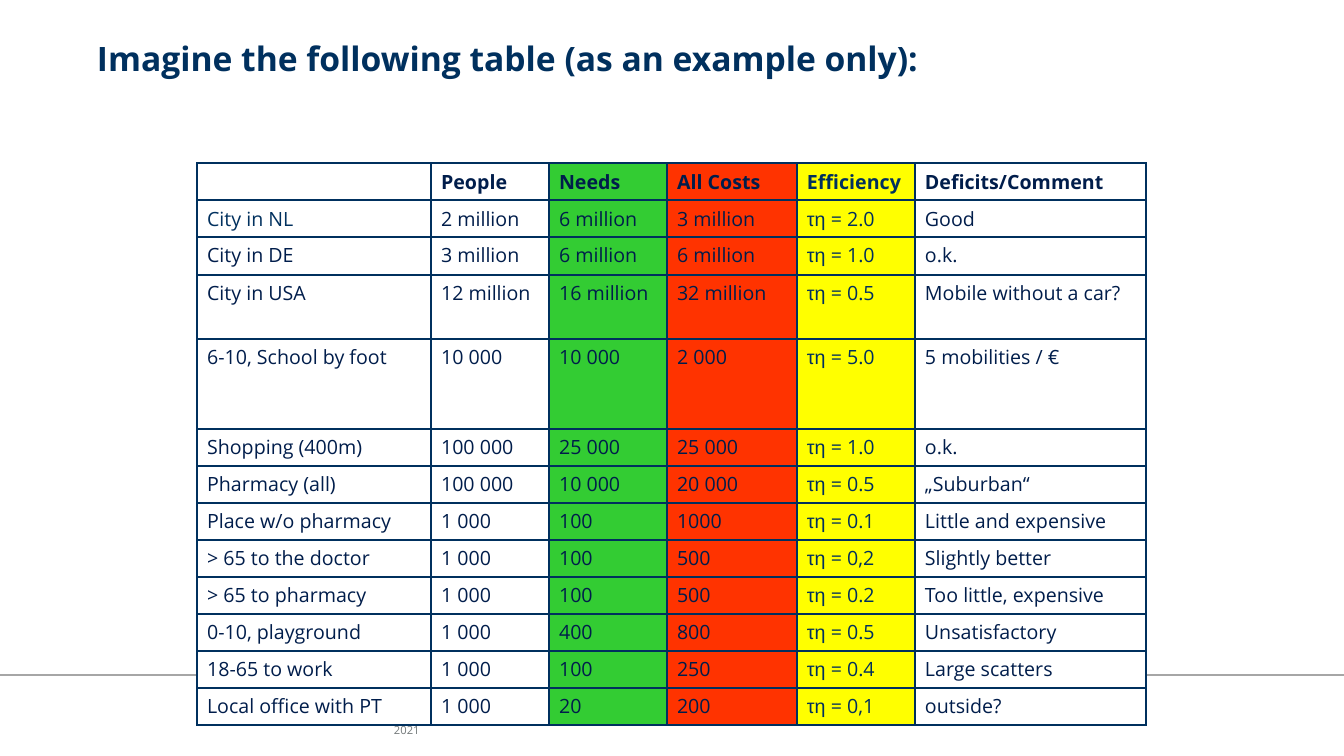
import pptx
import pptx.dml.color
import pptx.enum.shapes
import pptx.enum.text
import pptx.oxml
import pptx.oxml.ns
import pptx.util

RGBColor = pptx.dml.color.RGBColor
NAVY = RGBColor(0x00, 0x30, 0x5E)
INK = RGBColor(0x00, 0x1D, 0x4B)
WHITE = RGBColor(0xFF, 0xFF, 0xFF)
GREEN = RGBColor(0x33, 0xCC, 0x33)
RED = RGBColor(0xFF, 0x33, 0x00)
YELLOW = RGBColor(0xFF, 0xFF, 0x00)
RULE_GREY = RGBColor(0xA6, 0xA6, 0xA6)
TEXT_GREY = RGBColor(0x72, 0x78, 0x79)

TITLE = "Imagine the following table (as an example only):"
YEAR = "2021"
ROWS = [
    ("", "People", "Needs", "All Costs", "Efficiency", "Deficits/Comment"),
    ("City in NL", "2 million", "6 million", "3 million", "τη = 2.0", "Good"),
    ("City in DE", "3 million", "6 million", "6 million", "τη = 1.0", "o.k."),
    ("City in USA", "12 million", "16 million", "32 million", "τη = 0.5", "Mobile without a car?"),
    ("6-10, School by foot", "10 000", "10 000", "2 000", "τη = 5.0", "5 mobilities / €"),
    ("Shopping (400m)", "100 000", "25 000", "25 000", "τη = 1.0", "o.k."),
    ("Pharmacy (all)", "100 000", "10 000", "20 000", "τη = 0.5", "„Suburban“"),
    ("Place w/o pharmacy", "1 000", "100", "1000", "τη = 0.1", "Little and expensive"),
    ("> 65 to the doctor", "1 000", "100", "500", "τη = 0,2", "Slightly better"),
    ("> 65 to pharmacy", "1 000", "100", "500", "τη = 0.2", "Too little, expensive"),
    ("0-10, playground", "1 000", "400", "800", "τη = 0.5", "Unsatisfactory"),
    ("18-65 to work", "1 000", "100", "250", "τη = 0.4", "Large scatters"),
    ("Local office with PT", "1 000", "20", "200", "τη = 0,1", "outside?"),
]
COLUMN_WIDTHS = (234, 118, 118, 130, 118, 231)
COLUMN_FILLS = (WHITE, WHITE, GREEN, RED, YELLOW, WHITE)
EFFICIENCY_COLUMN = 4
ROW_HEIGHT = 37
TALL_ROWS = {2: 38, 3: 64, 4: 90}
SYMBOL = "τη"

SLIDE_SIZE = (1344, 756)
TITLE_BOX = (97, 38, 1166, 76)
YEAR_BOX = (394, 722, 572, 15)
TABLE_CORNER = (197, 163)
RULE_Y = 675
EMU_PER_PX = 12192000 / 1344


def px(*lengths):
    return [pptx.util.Emu(round(length * EMU_PER_PX)) for length in lengths]


def add_run(paragraph, text, size, color, bold=False, name="Open Sans"):
    run = paragraph.add_run()
    run.text = text
    for attribute, value in dict(name=name, size=pptx.util.Pt(size), bold=bold).items():
        setattr(run.font, attribute, value)
    run.font.color.rgb = color


def format_frame(frame, anchor):
    settings = dict(margin_left=0, margin_top=0, margin_right=0, margin_bottom=0,
                    word_wrap=True, vertical_anchor=anchor,
                    auto_size=pptx.enum.text.MSO_AUTO_SIZE.NONE)
    for attribute, value in settings.items():
        setattr(frame, attribute, value)


def add_title(slide):
    title = slide.shapes.title
    for attribute, value in zip(("left", "top", "width", "height"), px(*TITLE_BOX)):
        setattr(title, attribute, value)
    format_frame(title.text_frame, pptx.enum.text.MSO_ANCHOR.TOP)
    paragraph = title.text_frame.paragraphs[0]
    paragraph.alignment = pptx.enum.text.PP_ALIGN.LEFT
    add_run(paragraph, TITLE, 24, NAVY, bold=True)


def add_footer(slide):
    rule = slide.shapes.add_connector(
        pptx.enum.shapes.MSO_CONNECTOR.STRAIGHT, *px(0, RULE_Y, SLIDE_SIZE[0], RULE_Y))
    rule.line.color.rgb = RULE_GREY
    rule.line.width = pptx.util.Pt(1)
    rule._element.spPr.append(pptx.oxml.parse_xml(
        f"<a:effectLst {pptx.oxml.ns.nsdecls('a')}/>"))
    frame = slide.shapes.add_textbox(*px(*YEAR_BOX)).text_frame
    format_frame(frame, pptx.enum.text.MSO_ANCHOR.BOTTOM)
    add_run(frame.paragraphs[0], YEAR, 8, TEXT_GREY)


def add_borders(cell):
    properties = cell._tc.get_or_add_tcPr()
    for side in ("lnL", "lnR", "lnT", "lnB"):
        properties.append(pptx.oxml.parse_xml(
            f"<a:{side} {pptx.oxml.ns.nsdecls('a')} w='{pptx.util.Pt(1.5)}'>"
            f"<a:solidFill><a:srgbClr val='{NAVY}'/></a:solidFill></a:{side}>"))


def fill_cell(cell, text, row, column):
    add_borders(cell)
    cell.fill.solid()
    cell.fill.fore_color.rgb = COLUMN_FILLS[column]
    paragraph = cell.text_frame.paragraphs[0]
    if not text:
        paragraph._p.append(pptx.oxml.parse_xml(
            f"<a:endParaRPr {pptx.oxml.ns.nsdecls('a')} sz='1400'/>"))
        return
    color = NAVY if column == EFFICIENCY_COLUMN or (row, column) == (1, 0) else INK
    if text.startswith(SYMBOL):
        add_run(paragraph, SYMBOL, 14, color, name="Arial")
        text = text.removeprefix(SYMBOL)
    add_run(paragraph, text, 14, color, bold=row == 0)


def add_mobility_table(slide):
    heights = [TALL_ROWS.get(row, ROW_HEIGHT) for row in range(len(ROWS))]
    size = (sum(COLUMN_WIDTHS), sum(heights))
    table = slide.shapes.add_table(
        len(ROWS), len(COLUMN_WIDTHS), *px(*TABLE_CORNER, *size)).table
    table.first_row = table.horz_banding = False
    for column, width in zip(table.columns, px(*COLUMN_WIDTHS)):
        column.width = width
    for row, height in zip(table.rows, px(*heights)):
        row.height = height
    for row, values in enumerate(ROWS):
        for column, text in enumerate(values):
            fill_cell(table.cell(row, column), text, row, column)


def main():
    presentation = pptx.Presentation()
    presentation.slide_width, presentation.slide_height = px(*SLIDE_SIZE)
    slide = presentation.slides.add_slide(presentation.slide_layouts.get_by_name("Title Only"))
    add_title(slide)
    add_footer(slide)
    add_mobility_table(slide)
    presentation.save("out.pptx")


if __name__ == "__main__":
    main()
